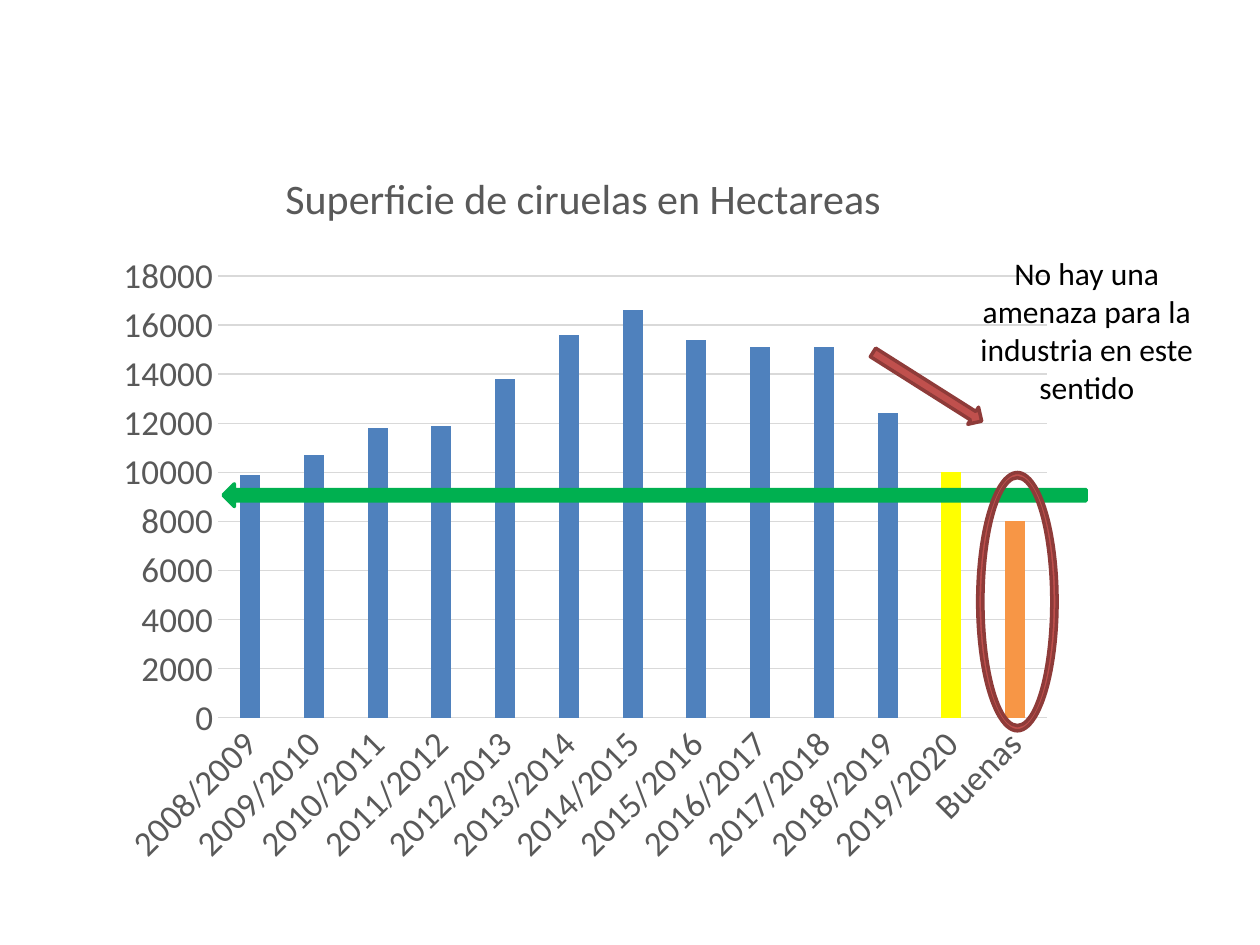
import pptx
import pptx.chart.data
import pptx.dml.color
import pptx.enum.chart
import pptx.enum.shapes
import pptx.enum.text
import pptx.oxml
import pptx.oxml.ns
import pptx.util

Inches = pptx.util.Inches
Pt = pptx.util.Pt
SHAPE = pptx.enum.shapes.MSO_SHAPE

YEARS = [f"{year}/{year + 1}" for year in range(2008, 2020)]
HECTARES = [9900, 10700, 11800, 11900, 13800, 15600, 16600,
            15400, 15100, 15100, 12400, 10000, 8000]
HIGHLIGHTS = {11: "FFFF00", 12: "F79646"}
TITLE_LAYOUT = {"xMode": "edge", "yMode": "edge", "x": 0.18, "y": 0.01}
PLOT_LAYOUT = {"layoutTarget": "inner", "xMode": "edge", "yMode": "edge",
               "x": 0.118, "y": 0.167, "w": 0.861, "h": 0.61}
GREY = "595959"
RULE = "D9D9D9"


def rgb(value):
    return pptx.dml.color.RGBColor.from_string(value)


def set_attrs(obj, values):
    for name, value in values.items():
        setattr(obj, name, value)


def set_font(font, size, color):
    set_attrs(font, {"name": "Calibri", "size": Pt(size), "bold": False})
    font.color.rgb = rgb(color)


def set_fill(fill, color):
    fill.solid()
    fill.fore_color.rgb = rgb(color)


def set_line(line, color, width):
    line.color.rgb = rgb(color)
    line.width = Pt(width)


def set_layout(parent, position, values):
    for old in parent.findall(pptx.oxml.ns.qn("c:layout")):
        parent.remove(old)
    items = "".join(f'<c:{name} val="{value}"/>' for name, value in values.items())
    parent.insert(position, pptx.oxml.parse_xml(
        f'<c:layout {pptx.oxml.ns.nsdecls("c")}>'
        f'<c:manualLayout>{items}</c:manualLayout></c:layout>'))


def format_axis(axis):
    none = pptx.enum.chart.XL_TICK_MARK.NONE
    set_attrs(axis, {"major_tick_mark": none, "minor_tick_mark": none})
    set_font(axis.tick_labels.font, 20, GREY)


def add_area_chart(s, x, y, w, h):
    data = pptx.chart.data.CategoryChartData(number_format="General")
    data.categories = YEARS + ["Buenas"]
    data.add_series("Series 1", HECTARES)
    kind = pptx.enum.chart.XL_CHART_TYPE.COLUMN_CLUSTERED
    chart = s.shapes.add_chart(
        kind, Inches(x), Inches(y), Inches(w), Inches(h), data).chart
    set_font(chart.font, 10, "000000")
    set_attrs(chart, {"has_legend": False, "has_title": True})

    p = chart.chart_title.text_frame.paragraphs[0]
    r = p.add_run()
    r.text = "Superficie de ciruelas en Hectareas"
    set_font(r.font, 24, GREY)
    chart.chart_title.include_in_layout = False
    set_layout(chart.chart_title._element, 1, TITLE_LAYOUT)

    cat, val = chart.category_axis, chart.value_axis
    for axis in (cat, val):
        format_axis(axis)
    cat._element.txPr.bodyPr.set("rot", "-2700000")
    set_line(cat.format.line, RULE, 0.75)
    val.format.line.fill.background()
    set_attrs(val, {"minimum_scale": 0, "maximum_scale": 18000,
                    "major_unit": 2000})
    set_line(val.major_gridlines.format.line, RULE, 0.75)

    plot = chart.plots[0]
    set_attrs(plot, {"gap_width": 219, "overlap": -27, "vary_by_categories": False})
    set_layout(plot._element.getparent(), 0, PLOT_LAYOUT)
    series = plot.series[0]
    series.invert_if_negative = False
    set_fill(series.format.fill, "4F81BD")
    for index, color in HIGHLIGHTS.items():
        set_fill(series.points[index].format.fill, color)


def add_mark(s, kind, x, y, w, h, fill, line, rotation=0):
    sp = s.shapes.add_shape(kind, Inches(x), Inches(y), Inches(w), Inches(h))
    sp.shadow.inherit = False
    sp.rotation = rotation
    set_fill(sp.fill, fill)
    set_line(sp.line, line, 2)
    return sp


def add_note(s, text, x, y, w, h):
    tf = s.shapes.add_textbox(Inches(x), Inches(y), Inches(w), Inches(h)).text_frame
    set_attrs(tf, {"word_wrap": True,
                   "auto_size": pptx.enum.text.MSO_AUTO_SIZE.SHAPE_TO_FIT_TEXT})
    p = tf.paragraphs[0]
    p.alignment = pptx.enum.text.PP_ALIGN.CENTER
    r = p.add_run()
    r.text = text
    set_font(r.font, 18, "000000")


def main():
    prs = pptx.Presentation()
    set_attrs(prs, {"slide_width": Inches(10), "slide_height": Inches(7.5)})
    s = prs.slides.add_slide(prs.slide_layouts[6])
    add_area_chart(s, 0.83, 1.23, 7.64, 5.75)
    add_mark(s, SHAPE.RIGHT_ARROW, 6.85, 2.99, 1.02, 0.16, "C0504D", "8E3B39", 32.3)
    add_note(s, "No hay una amenaza para la industria en este sentido",
             7.6, 1.97, 2.05, 1.31)
    add_mark(s, SHAPE.LEFT_ARROW, 1.77, 3.84, 6.85, 0.18, "00B050", "00B050")
    ring = add_mark(s, SHAPE.DONUT, 7.76, 3.75, 0.63, 2.05, "C0504D", "8E3B39")
    ring.adjustments[0] = 0.066
    prs.save("out.pptx")


if __name__ == "__main__":
    main()
